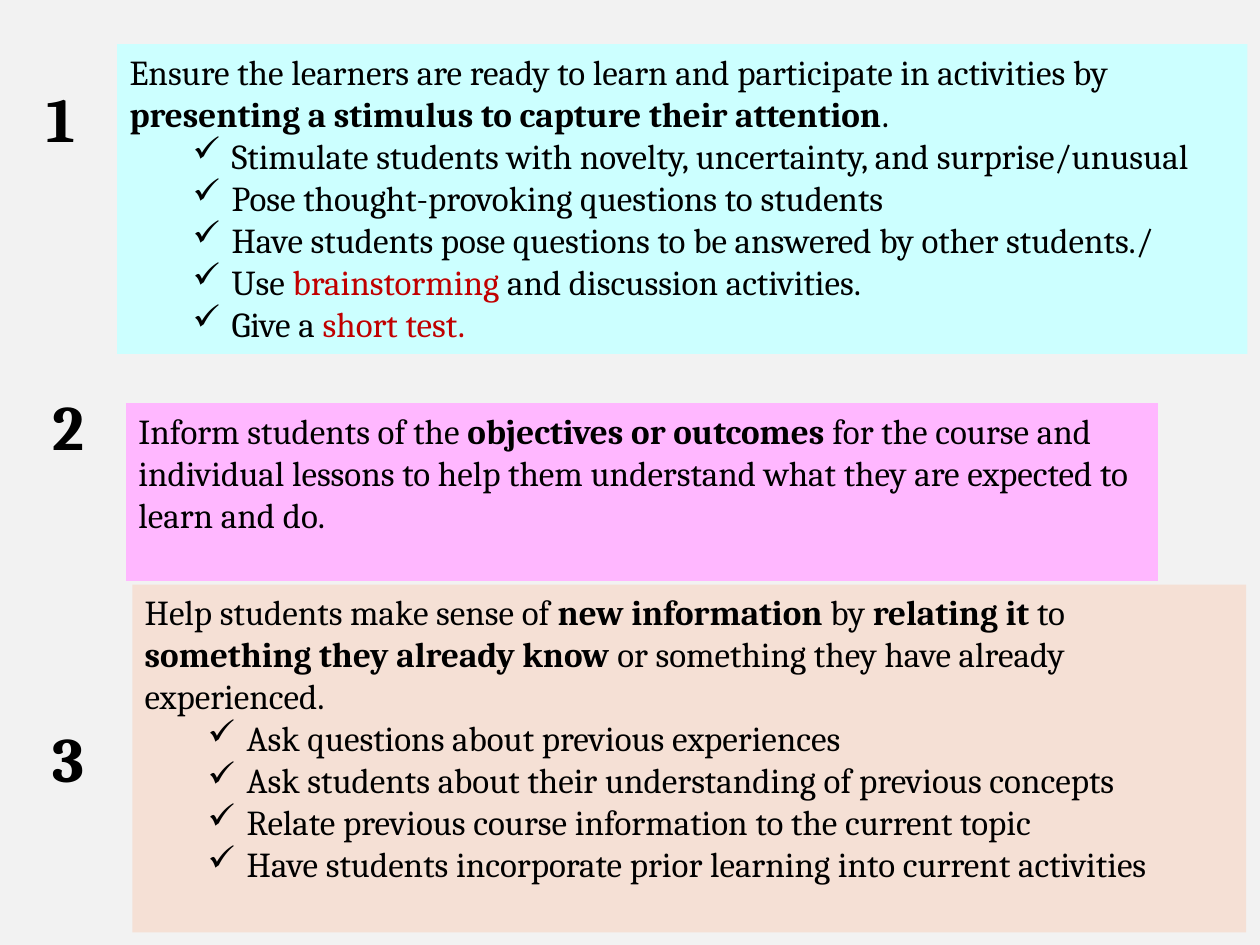
from pptx import Presentation
from pptx.dml.color import RGBColor
from pptx.enum.shapes import MSO_SHAPE as Shape
from pptx.enum.text import MSO_ANCHOR as Anchor, MSO_AUTO_SIZE as AutoSize, PP_ALIGN as Align
from pptx.oxml.ns import qn
from pptx.util import Inches, Pt
from lxml.etree import SubElement

COLORS = {
    "background": "F2F2F2", "text": "000000", "accent": "C00000",
    "attention": "CCFFFF", "objectives": "FFB7FF", "recall": "F5E0D5",
}
STYLES = {
    "plain": {"size": 20, "bold": False, "color": "text"},
    "bold": {"size": 20, "bold": True, "color": "text"},
    "accent": {"size": 20, "bold": False, "color": "accent"},
    "number": {"size": 36, "bold": True, "color": "text"},
}
FONT = "Cambria"
NUMBER_SIZE = (0.73, 0.71)
BULLET, BULLET_LEFT, BULLET_HANG = "✓", 0.81, 0.31

# Content: each paragraph is a list of (text, style) runs
STEPS = [
    {
        "fill": "attention", "box": (0.93, 0.35, 8.97, 2.46), "number_at": (0.27, 0.58),
        "intro": [
            ("Ensure the learners are ready to learn and participate in activities by ", "plain"),
            ("presenting a stimulus to capture their attention", "bold"),
            (".", "plain"),
        ],
        "bullets": [
            [("Stimulate students with novelty, uncertainty, and surprise/unusual", "plain")],
            [("Pose thought-provoking questions to students", "plain")],
            [("Have students pose questions to be answered by other students./", "plain")],
            [("Use ", "plain"), ("brainstorming", "accent"),
             (" and discussion activities.", "plain")],
            [("Give a ", "plain"), ("short test.", "accent")],
        ],
    },
    {
        "fill": "objectives", "box": (1, 3.2, 8.19, 1.41), "number_at": (0.32, 3.03),
        "intro": [
            ("Inform students of the ", "plain"),
            ("objectives or outcomes ", "bold"),
            ("for the course and individual lessons to help them understand "
             "what they are expected to learn and do.", "plain"),
        ],
        "bullets": [],
    },
    {
        "fill": "recall", "box": (1.05, 4.64, 8.84, 2.76), "number_at": (0.32, 5.66),
        "intro": [
            ("Help students make sense of ", "plain"),
            ("new information ", "bold"),
            ("by ", "plain"),
            ("relating it ", "bold"),
            ("to ", "plain"),
            ("something they already know", "bold"),
            (" or something they have already experienced.", "plain"),
        ],
        "bullets": [
            [("Ask questions about previous experiences", "plain")],
            [("Ask students about their understanding of previous concepts", "plain")],
            [("Relate previous course information to the current topic", "plain")],
            [("Have students incorporate prior learning into current activities", "plain")],
        ],
    },
]


def color(name):
    return RGBColor.from_string(COLORS[name])


def set_bullet(paragraph):
    paragraph.level = 1
    properties = paragraph._p.get_or_add_pPr()
    properties.set("marL", str(Inches(BULLET_LEFT)))
    properties.set("indent", str(-Inches(BULLET_HANG)))
    SubElement(properties, qn("a:buChar")).set("char", BULLET)


def write_paragraph(paragraph, runs):
    paragraph.alignment = Align.LEFT
    for text, style_name in runs:
        style = STYLES[style_name]
        run = paragraph.add_run()
        run.text = text
        values = {"name": FONT, "size": Pt(style["size"]), "bold": style["bold"]}
        for attribute, value in values.items():
            setattr(run.font, attribute, value)
        run.font.color.rgb = color(style["color"])


def write_text(shape, intro, bullets=()):
    frame = shape.text_frame
    settings = {"word_wrap": True, "auto_size": AutoSize.NONE, "vertical_anchor": Anchor.TOP}
    for attribute, value in settings.items():
        setattr(frame, attribute, value)
    write_paragraph(frame.paragraphs[0], intro)
    for runs in bullets:
        paragraph = frame.add_paragraph()
        set_bullet(paragraph)
        write_paragraph(paragraph, runs)


def main():
    presentation = Presentation()
    presentation.slide_width, presentation.slide_height = Inches(10), Inches(7.5)
    slide = presentation.slides.add_slide(presentation.slide_layouts[6])
    slide.background.fill.solid()
    slide.background.fill.fore_color.rgb = color("background")

    for number, step in enumerate(STEPS, start=1):
        # Coloured panel with the step's text
        panel = slide.shapes.add_shape(Shape.RECTANGLE, *map(Inches, step["box"]))
        panel.shadow.inherit = False
        panel.fill.solid()
        panel.fill.fore_color.rgb = color(step["fill"])
        panel.line.fill.background()
        write_text(panel, step["intro"], step["bullets"])

        # Step number
        label = slide.shapes.add_textbox(*map(Inches, step["number_at"] + NUMBER_SIZE))
        write_text(label, [(str(number), "number")])

    presentation.save("out.pptx")


if __name__ == "__main__":
    main()
